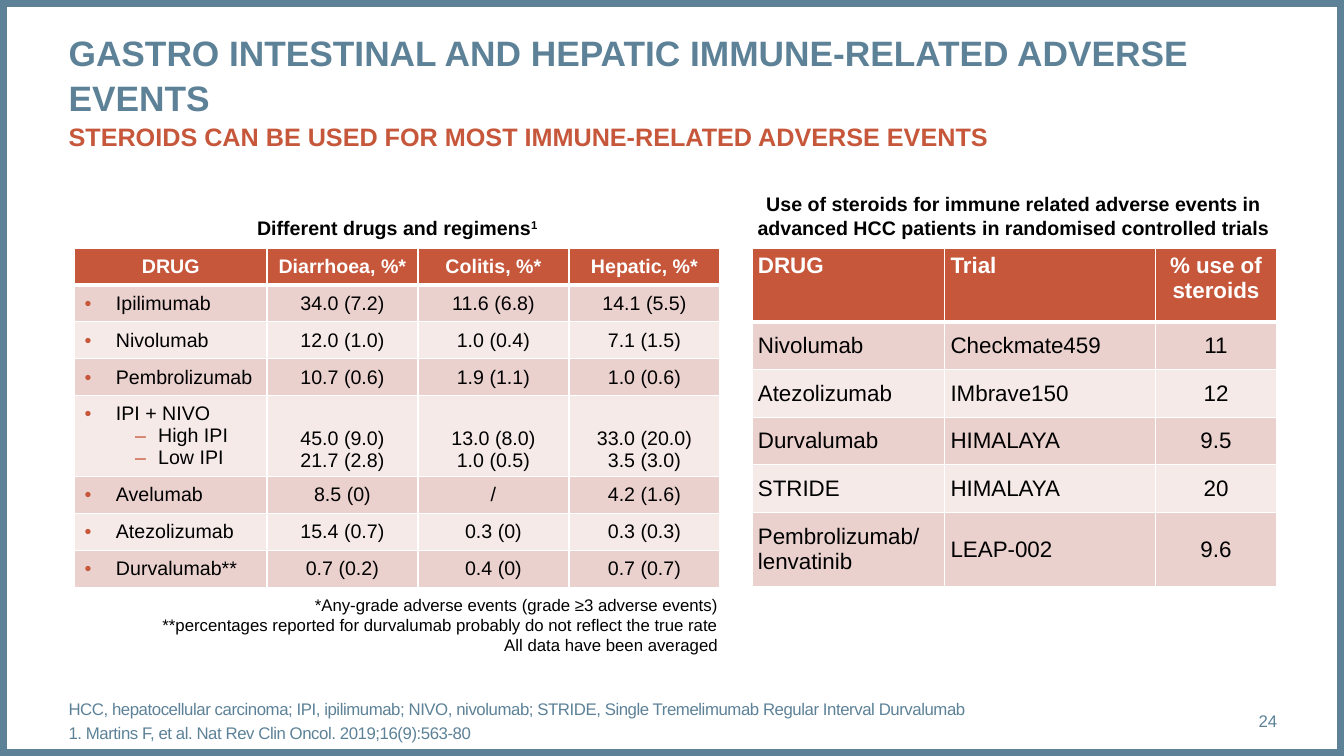
from lxml.etree import SubElement
from pptx import Presentation
from pptx.dml.color import RGBColor
from pptx.enum.shapes import MSO_SHAPE as Shape
from pptx.enum.text import MSO_ANCHOR as Anchor, PP_ALIGN as Align
from pptx.oxml.ns import qn
from pptx.util import Pt

SLATE, RUST, BLACK, WHITE = "5D8298", "C6573B", "000000", "FFFFFF"
BANDS = ("EAD1CE", "F5EAE8")
BULLETS = {0: ("•", 22.3, -22.3), 1: ("–", 52.5, -16.5)}

DRUG_RATES = [
    ["DRUG", "Diarrhoea, %*", "Colitis, %*", "Hepatic, %*"],
    ["Ipilimumab", "34.0 (7.2)", "11.6 (6.8)", "14.1 (5.5)"],
    ["Nivolumab", "12.0 (1.0)", "1.0 (0.4)", "7.1 (1.5)"],
    ["Pembrolizumab", "10.7 (0.6)", "1.9 (1.1)", "1.0 (0.6)"],
    ["IPI + NIVO\nHigh IPI\nLow IPI", "45.0 (9.0)\n21.7 (2.8)",
     "13.0 (8.0)\n1.0 (0.5)", "33.0 (20.0)\n3.5 (3.0)"],
    ["Avelumab", "8.5 (0)", "/", "4.2 (1.6)"],
    ["Atezolizumab", "15.4 (0.7)", "0.3 (0)", "0.3 (0.3)"],
    ["Durvalumab**", "0.7 (0.2)", "0.4 (0)", "0.7 (0.7)"],
]
STEROID_USE = [
    ["DRUG", "Trial", "% use of steroids"],
    ["Nivolumab", "Checkmate459", "11"],
    ["Atezolizumab", "IMbrave150", "12"],
    ["Durvalumab", "HIMALAYA", "9.5"],
    ["STRIDE", "HIMALAYA", "20"],
    ["Pembrolizumab/\vlenvatinib", "LEAP-002", "9.6"],
]


def colour(code):
    """Turn a hex string into a colour."""
    return RGBColor.from_string(code)


def add_span(para, text, size=14, color=BLACK, bold=False, tracking=None, raised=False):
    """Add one formatted run to a paragraph."""
    span = para.add_run()
    span.text = text
    font = span.font
    font.name, font.size, font.bold = "Arial", Pt(size), bold
    font.color.rgb = colour(color)
    properties = span._r.get_or_add_rPr()
    if tracking:
        properties.set("spc", str(tracking))
    if raised:
        properties.set("baseline", "30000")
    return span


def write(frame, text, align=Align.LEFT, before=0, **style):
    """Write each line of text as a paragraph; a vertical tab breaks a line."""
    for index, line in enumerate(text.split("\n")):
        para = frame.add_paragraph() if index else frame.paragraphs[0]
        para.alignment = align
        para.space_before = Pt(before)
        for part_index, part in enumerate(line.split("\v")):
            if part_index:
                para.add_line_break()
            add_span(para, part, **style)


def set_insets(holder, across, down):
    """Set equal side margins and equal top and bottom margins."""
    holder.margin_left = holder.margin_right = Pt(across)
    holder.margin_top = holder.margin_bottom = Pt(down)


def add_text(page, area, text, anchor=Anchor.TOP, insets=(7.2, 3.6), **style):
    """Add a wrapping text box and return its frame."""
    frame = page.shapes.add_textbox(*map(Pt, area)).text_frame
    frame.word_wrap = True
    frame.vertical_anchor = anchor
    set_insets(frame, *insets)
    write(frame, text, **style)
    return frame


def add_bullet(para, level):
    """Give a paragraph the bullet of its level."""
    mark, margin, indent = BULLETS[level]
    para.level = level
    properties = para._p.get_or_add_pPr()
    properties.set("marL", str(int(Pt(margin))))
    properties.set("indent", str(int(Pt(indent))))
    shade = SubElement(properties, qn("a:buClr"))
    SubElement(shade, qn("a:srgbClr"), val=RUST)
    SubElement(properties, qn("a:buFont"), typeface="Arial")
    SubElement(properties, qn("a:buChar"), char=mark)


def add_borders(cell, top, bottom):
    """Draw white cell borders with the given top and bottom widths."""
    properties = cell._tc.get_or_add_tcPr()
    for side, width in (("L", 1), ("R", 1), ("T", top), ("B", bottom)):
        line = SubElement(properties, qn(f"a:ln{side}"), w=str(int(Pt(width))))
        fill = SubElement(line, qn("a:solidFill"))
        SubElement(fill, qn("a:srgbClr"), val=WHITE)


def add_grid(page, area, rows, widths, heights, aligns, size, inset, header_anchor):
    """Add a table with a rust header and alternating bands; return it."""
    grid = page.shapes.add_table(len(rows), len(widths), *map(Pt, area)).table
    grid.horz_banding = False
    for column, width in zip(grid.columns, widths):
        column.width = Pt(width)
    for index, (row, height) in enumerate(zip(rows, heights)):
        header = index == 0
        grid.rows[index].height = Pt(height)
        for place, text in enumerate(row):
            cell = grid.cell(index, place)
            set_insets(cell, inset, 3.6)
            cell.vertical_anchor = header_anchor if header else Anchor.MIDDLE
            add_borders(cell, top=3 if index == 1 else 1, bottom=3 if header else 1)
            cell.fill.solid()
            cell.fill.fore_color.rgb = colour(RUST if header else BANDS[(index - 1) % 2])
            write(cell.text_frame, text, aligns[place], size=size,
                  color=WHITE if header else BLACK, bold=header)
    return grid


def add_frame(page, width, height):
    """Outline the page."""
    box = page.shapes.add_shape(Shape.RECTANGLE, 0, 0, width, height)
    box.shadow.inherit = False
    box.fill.background()
    box.line.color.rgb = colour(SLATE)
    box.line.width = Pt(10)


def add_heading(page, area):
    """Place the title and its second, smaller line."""
    box = page.shapes.title
    box.left, box.top, box.width, box.height = map(Pt, area)
    frame = box.text_frame
    frame.word_wrap = True
    frame.vertical_anchor = Anchor.TOP
    set_insets(frame, 0, 0)
    para = frame.paragraphs[0]
    para.alignment, para.line_spacing = Align.LEFT, 1.07
    add_span(para, "GASTRO INTESTINAL AND HEPATIC IMMUNE-RELATED ADVERSE EVENTS",
             size=25.2, color=SLATE, bold=True)
    para.add_line_break()
    add_span(para, "STEROIDS CAN BE USED FOR MOST IMMUNE-RELATED ADVERSE EVENTS",
             size=18, color=RUST, bold=True)


def add_drug_panel(page, left, top, width):
    """Place the caption, table and notes on drugs and regimens."""
    caption = add_text(page, (left, top, width, 40.5), "Different drugs and regimens",
                       anchor=Anchor.BOTTOM, align=Align.CENTER, bold=True)
    add_span(caption.paragraphs[0], "1", bold=True, raised=True)
    heights = [54.6 if "\n" in row[0] else 26.4 for row in DRUG_RATES]
    grid = add_grid(page, (left, top + 43.2, width, sum(heights)), DRUG_RATES,
                    [137.4] + [(width - 137.4) / 3] * 3, heights,
                    [Align.LEFT] + [Align.CENTER] * 3, 14, 7.2, Anchor.MIDDLE)
    grid.cell(0, 0).text_frame.paragraphs[0].alignment = Align.CENTER
    for index, row in enumerate(DRUG_RATES[1:], 1):
        for level, para in enumerate(grid.cell(index, 0).text_frame.paragraphs):
            add_bullet(para, min(level, 1))
        if "\n" in row[0]:
            for place in range(1, len(row)):
                grid.cell(index, place).vertical_anchor = Anchor.BOTTOM
    add_text(page, (left + 52.6, top + 287.3, width - 46.9, 51),
             "*Any-grade adverse events (grade ≥3 adverse events)\n"
             "**percentages reported for durvalumab probably do not reflect the true rate\n"
             "All data have been averaged", align=Align.RIGHT, size=12)


def add_steroid_panel(page, left, top, width):
    """Place the caption and table on the use of steroids."""
    add_text(page, (left - 3.6, top, width + 6, 40.5),
             "Use of steroids for immune related adverse events in\n"
             "advanced HCC patients in randomised controlled trials",
             anchor=Anchor.BOTTOM, align=Align.CENTER, bold=True)
    heights = [53] + [34] * 4 + [53]
    add_grid(page, (left, top + 43.2, width, sum(heights)), STEROID_USE,
             [137.6, 150.4, width - 288], heights,
             [Align.LEFT, Align.LEFT, Align.CENTER], 16, 4.3, Anchor.TOP)


def add_footer(page, left, top, width, height):
    """Place the abbreviations, the reference and the page number."""
    add_text(page, (left, top, 801.4, height),
             "HCC, hepatocellular carcinoma; IPI, ipilimumab; NIVO, nivolumab; "
             "STRIDE, Single Tremelimumab Regular Interval Durvalumab\n"
             "1. Martins F, et al. Nat Rev Clin Oncol. 2019;16(9):563-80",
             anchor=Anchor.MIDDLE, insets=(0, 0), before=3, size=12, color=SLATE, tracking=-30)
    add_text(page, (left + width - 84, top, 84, height), "24", anchor=Anchor.MIDDLE,
             insets=(0, 0), align=Align.RIGHT, size=12, color=SLATE)


def main():
    """Build the slide and save it."""
    deck = Presentation()
    deck.slide_width, deck.slide_height = Pt(960), Pt(540)
    page = deck.slides.add_slide(deck.slide_layouts[5])
    add_frame(page, deck.slide_width, deck.slide_height)
    add_heading(page, (49, 20.2, 863.3, 67.7))
    add_drug_panel(page, 53.3, 133.9, 461)
    add_steroid_panel(page, 537.1, 133.9, 375)
    add_footer(page, 49, 500.4, 863.3, 28.8)
    deck.save("out.pptx")


if __name__ == "__main__":
    main()
